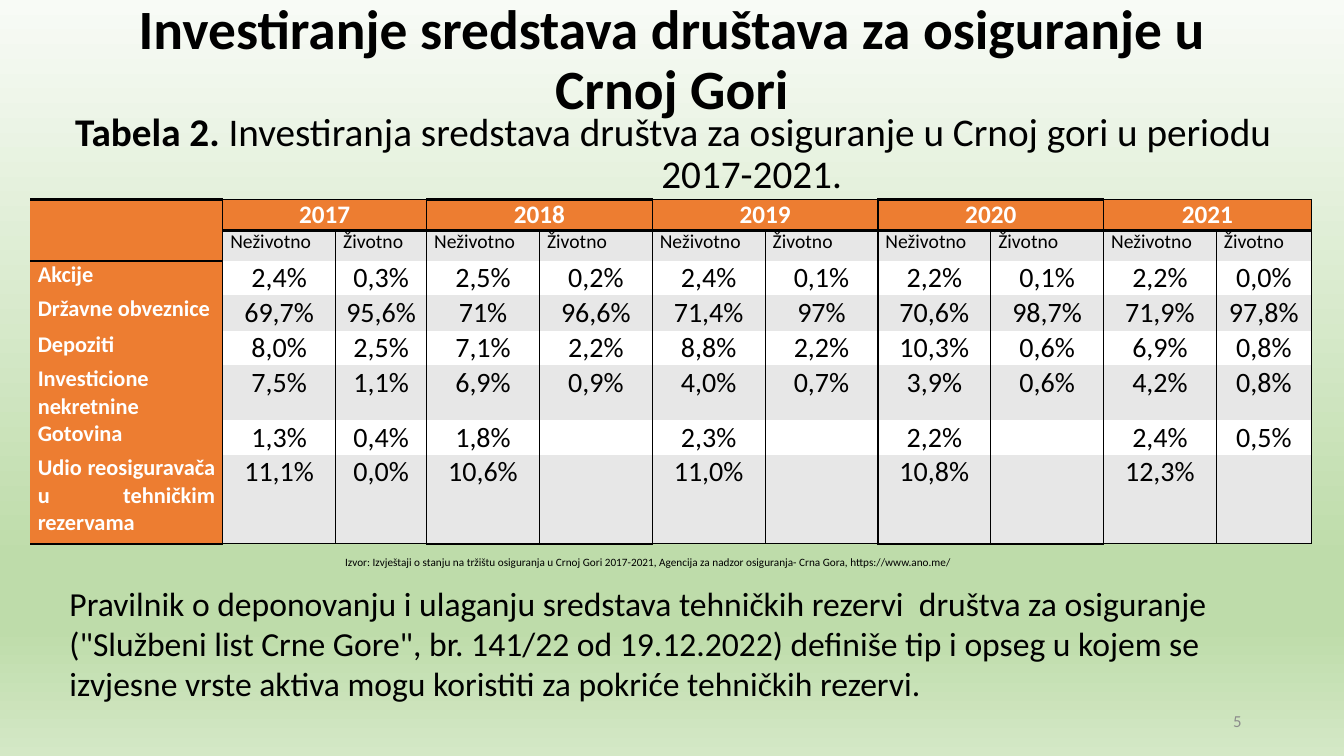
from lxml.etree import SubElement
from pptx import Presentation
from pptx.dml.color import RGBColor
from pptx.enum.text import MSO_ANCHOR, PP_ALIGN
from pptx.oxml.ns import qn
from pptx.util import Pt

BLACK, WHITE, ORANGE, GREY = "000000", "FFFFFF", "ED7D31", "E7E7E7"


def add_run(paragraph, text, size, color=BLACK, bold=False):
    run = paragraph.add_run()
    run.text = text
    run.font.name = "Calibri"
    run.font.size = Pt(size)
    run.font.bold = bold
    run.font.color.rgb = RGBColor.from_string(color)


def add_text(left, top, width, height, runs, align=PP_ALIGN.LEFT, anchor=MSO_ANCHOR.TOP):
    frame = slide.shapes.add_textbox(Pt(left), Pt(top), Pt(width), Pt(height)).text_frame
    frame.word_wrap = True
    frame.vertical_anchor = anchor
    paragraph = frame.paragraphs[0]
    paragraph.alignment = align
    for run in runs:
        add_run(paragraph, *run)
    return paragraph


prs = Presentation()
prs.slide_width, prs.slide_height = Pt(960), Pt(540)
slide = prs.slides.add_slide(prs.slide_layouts[6])

# Background gradient, top to bottom
background = slide.background.fill
background.gradient()
background.gradient_angle = 270
stops = slide.element.find(".//" + qn("a:gsLst"))
stops.clear()
for percent, color in [(0, "F8FBF6"), (74, "BEDCAA"), (83, "BEDCAA"), (100, "D4E8C6")]:
    stop = SubElement(stops, qn("a:gs"), pos=str(percent * 1000))
    SubElement(stop, qn("a:srgbClr"), val=color)

# Title and table caption
title = add_text(66, -2.3, 828, 94, [
    ("Investiranje sredstava društava za osiguranje u Crnoj Gori", 39.6, BLACK, True)],
    PP_ALIGN.CENTER)
title.line_spacing = 0.9
caption = add_text(16, 77, 929.5, 66, [
    ("Tabela 2. ", 28, BLACK, True),
    ("Investiranja sredstava društva za osiguranje u Crnoj gori u periodu 2017-2021.", 28)],
    PP_ALIGN.CENTER)
caption.line_spacing = 0.9
caption_indent = caption._p.get_or_add_pPr()
caption_indent.set("marL", str(Pt(112.3)))
caption_indent.set("indent", str(-Pt(112.3)))

# Investment table: two columns, non-life and life, for each year
years = ["2017", "2018", "2019", "2020", "2021"]
investments = [
    ("Akcije", "2,4% 0,3% 2,5% 0,2% 2,4% 0,1% 2,2% 0,1% 2,2% 0,0%"),
    ("Državne obveznice", "69,7% 95,6% 71% 96,6% 71,4% 97% 70,6% 98,7% 71,9% 97,8%"),
    ("Depoziti", "8,0% 2,5% 7,1% 2,2% 8,8% 2,2% 10,3% 0,6% 6,9% 0,8%"),
    ("Investicione nekretnine", "7,5% 1,1% 6,9% 0,9% 4,0% 0,7% 3,9% 0,6% 4,2% 0,8%"),
    ("Gotovina", "1,3% 0,4% 1,8% - 2,3% - 2,2% - 2,4% 0,5%"),
    ("Udio reosiguravača u tehničkim rezervama",
     "11,1% 0,0% 10,6% - 11,0% - 10,8% - 12,3% -"),
]
rows = [[""] + [text for year in years for text in (year, "")],
        [""] + ["Neživotno", "Životno"] * len(years)]
rows += [[label] + [share.replace("-", "") for share in shares.split()]
         for label, shares in investments]
column_widths = [137.5, 80.7, 65] + [80.6] * 7 + [67.8]
row_heights = [22, 22, 24.5, 25.5, 24.5, 39.3, 24.5, 63.7]

table = slide.shapes.add_table(len(rows), len(column_widths), Pt(21.6), Pt(142.5),
                               Pt(sum(column_widths)), Pt(sum(row_heights))).table
table._tbl.tblPr.find(qn("a:tableStyleId")).text = "{2D5ABB26-0587-4C30-8999-92F81FD0307C}"
for column, width in zip(table.columns, column_widths):
    column.width = Pt(width)
for row, height in zip(table.rows, row_heights):
    row.height = Pt(height)

table.cell(0, 0).merge(table.cell(1, 0))
for col in range(1, len(column_widths), 2):
    table.cell(0, col).merge(table.cell(0, col + 1))

last_row = len(rows) - 1
for r, texts in enumerate(rows):
    for c, text in enumerate(texts):
        cell = table.cell(r, c)
        cell.margin_left = cell.margin_right = Pt(5.4)
        cell.margin_top = cell.margin_bottom = 0

        # Borders: heavier above and below the label column and every second year
        edge_width = 2 if c in (0, 3, 4, 7, 8) else 1
        borders = {"a:lnR": 1}
        if c > 0:
            borders["a:lnL"] = 1
        if r == 0:
            borders["a:lnT"] = edge_width
        if r == 0 or (r == 1 and c == 0):
            borders["a:lnB"] = 2
        if r == last_row:
            borders["a:lnB"] = edge_width
        properties = cell._tc.get_or_add_tcPr()
        for side in ("a:lnL", "a:lnR", "a:lnT", "a:lnB"):
            if side in borders:
                line = SubElement(properties, qn(side), w=str(Pt(borders[side])))
                SubElement(SubElement(line, qn("a:solidFill")), qn("a:srgbClr"), val=BLACK)

        heading = r == 0 or c == 0
        cell.fill.solid()
        cell.fill.fore_color.rgb = RGBColor.from_string(
            ORANGE if heading else GREY if r % 2 else WHITE)

        paragraph = cell.text_frame.paragraphs[0]
        paragraph.alignment = PP_ALIGN.JUSTIFY if c == 0 or r == 1 else PP_ALIGN.CENTER
        size = 18 if r == 0 else 16 if c == 0 else 14 if r == 1 else 20
        if text:
            add_run(paragraph, text, size, WHITE if heading else BLACK, heading)

# Source line, regulation note and slide number
add_text(82.8, 393, 761, 17, [
    ("Izvor: Izvještaji o stanju na tržištu osiguranja u Crnoj Gori 2017-2021, "
     "Agencija za nadzor osiguranja- Crna Gora, https://www.ano.me/", 8)], PP_ALIGN.CENTER)
add_text(42.5, 412.6, 893.5, 94, [
    ("Pravilnik o deponovanju i ulaganju sredstava tehničkih rezervi  društva za osiguranje "
     "(\"Službeni list Crne Gore\", br. 141/22 od 19.12.2022) definiše tip i opseg u kojem se "
     "izvjesne vrste aktiva mogu koristiti za pokriće tehničkih rezervi.", 24)])
add_text(678, 500.5, 216, 28.8, [("5", 12, "8C8C8C")], PP_ALIGN.RIGHT, MSO_ANCHOR.MIDDLE)

prs.save("out.pptx")
